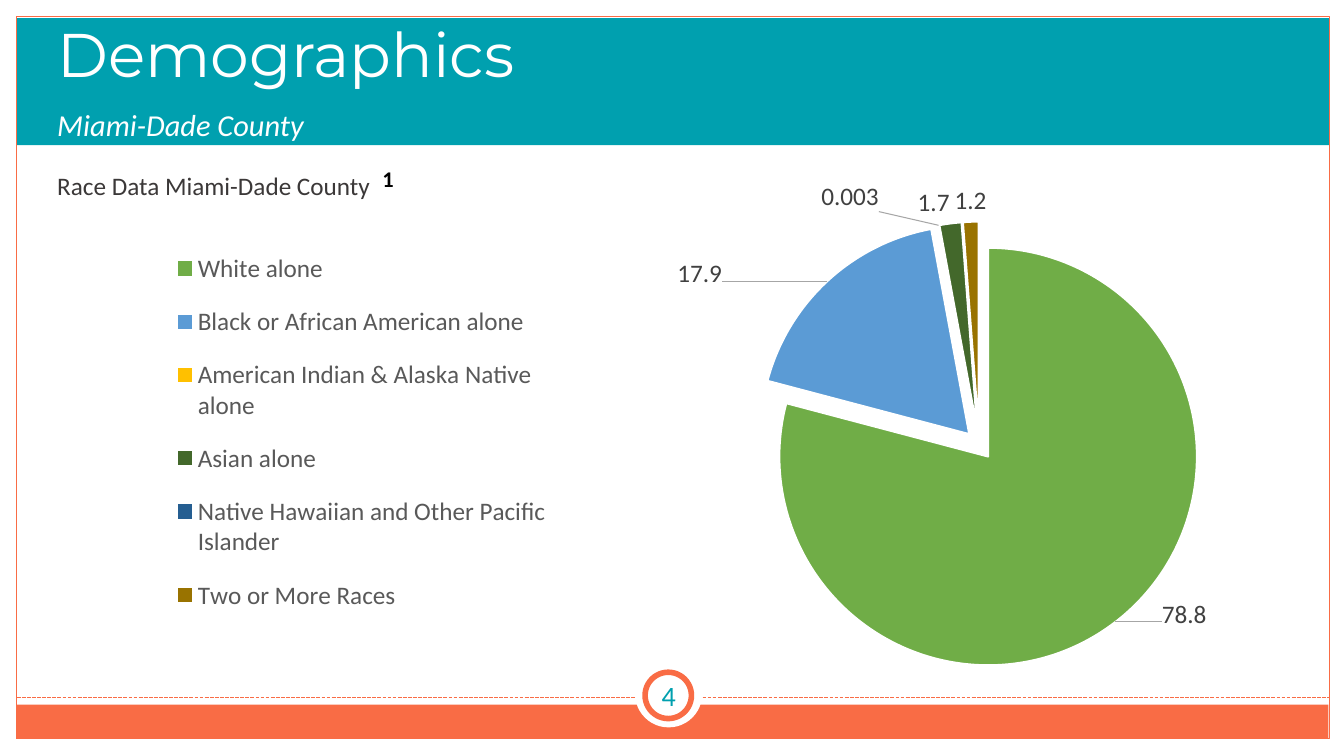
import pptx
import pptx.chart.data
import pptx.dml.color
import pptx.enum.chart
import pptx.enum.dml
import pptx.enum.shapes
import pptx.enum.text
import pptx.oxml
import pptx.oxml.ns
import pptx.util

Pt = pptx.util.Pt
qn = pptx.oxml.ns.qn
SHAPES = pptx.enum.shapes.MSO_SHAPE
ALIGN = pptx.enum.text.PP_ALIGN
ANCHOR = pptx.enum.text.MSO_ANCHOR

COLORS = {
    "teal": "00A0AF", "orange": "F96C45", "white": "FFFFFF", "black": "000000",
    "heading": "3B3838", "legend": "595959", "label": "404040", "leader": "A6A6A6",
}


def rgb(name):
    return pptx.dml.color.RGBColor.from_string(COLORS.get(name, name))


def write(shape, text, color, spacing=1.0, align=ALIGN.LEFT, anchor=ANCHOR.TOP, wrap=True, **font):
    frame = shape.text_frame
    frame.auto_size = pptx.enum.text.MSO_AUTO_SIZE.NONE
    frame.word_wrap = wrap
    frame.vertical_anchor = anchor
    paragraph = frame.paragraphs[0]
    paragraph.alignment = align
    paragraph.line_spacing = spacing
    run = paragraph.add_run()
    run.text = text
    run.font.color.rgb = rgb(color)
    for name, value in font.items():
        setattr(run.font, name, value)


presentation = pptx.Presentation()
presentation.slide_width = Pt(960)
presentation.slide_height = Pt(540)
slide = presentation.slides.add_slide(presentation.slide_layouts[5])
shapes = slide.shapes
title = shapes.title

# Frame, header and footer bands, page number badge
dashed_line = shapes.add_connector(
    pptx.enum.shapes.MSO_CONNECTOR.STRAIGHT, Pt(12), Pt(498.2), Pt(949), Pt(498.2))
dashed_line.line.color.rgb = rgb("orange")
dashed_line.line.width = Pt(0.9)
dashed_line.line.dash_style = pptx.enum.dml.MSO_LINE.SQUARE_DOT
dashed_line._element.spPr.append(pptx.oxml.parse_xml(
    '<a:effectLst xmlns:a="http://schemas.openxmlformats.org/drawingml/2006/main"/>'))

for preset, left, top, width, height, fill, line, line_width in [
    (SHAPES.RECTANGLE, 12, 13, 937.4, 90.7, "teal", None, 0),
    (SHAPES.RECTANGLE, 11.5, 503.3, 937.4, 24.5, "orange", None, 0),
    (SHAPES.RECTANGLE, 12, 12, 937.4, 515.5, None, "orange", 0.75),
    (SHAPES.OVAL, 453.6, 471.6, 48, 48, "white", None, 0),
    (SHAPES.OVAL, 460.8, 480.2, 33.1, 33.1, "white", "orange", 4),
]:
    shape = shapes.add_shape(preset, Pt(left), Pt(top), Pt(width), Pt(height))
    shape.shadow.inherit = False
    if fill:
        shape.fill.solid()
        shape.fill.fore_color.rgb = rgb(fill)
    else:
        shape.fill.background()
    if line:
        shape.line.color.rgb = rgb(line)
        shape.line.width = Pt(line_width)
    else:
        shape.line.fill.background()

# Title, brought in front of the header band
title.left, title.top, title.width, title.height = Pt(33.8), Pt(13.7), Pt(828), Pt(104.4)
write(title, "Demographics", "white", spacing=0.9, name="Montserrat", size=Pt(44))
shapes._spTree.append(title._element)

# Text boxes
for box, text, style in [
    ((33.8, 79.2, 724.3, 28.1), "Miami-Dade County",
     dict(color="white", spacing=0.7, size=Pt(21.7), italic=True)),
    ((447.1, 479.5, 61.2, 34.6), "4",
     dict(color="teal", align=ALIGN.CENTER, anchor=ANCHOR.MIDDLE, size=Pt(20))),
    ((252, 114.5, 50.4, 26.6), "1",
     dict(color="black", align=ALIGN.CENTER, size=Pt(16), bold=True)),
    ((33.8, 118.1, 241.2, 28.8), "Race Data Miami-Dade County",
     dict(color="heading", wrap=False, size=Pt(18))),
]:
    write(shapes.add_textbox(*map(Pt, box)), text, name="Calibri", **style)

# Pie chart
RACES = [
    ("White alone", 78.8, "70AD47"),
    ("Black or African American alone", 17.9, "5B9BD5"),
    ("American Indian & Alaska Native alone", 0.003, "FFC000"),
    ("Asian alone", 1.7, "43682B"),
    ("Native Hawaiian and Other Pacific Islander", 0, "255E91"),
    ("Two or More Races", 1.2, "997300"),
]
chart_data = pptx.chart.data.CategoryChartData()
chart_data.categories = [race for race, share, color in RACES]
chart_data.add_series("Series 1", [share for race, share, color in RACES])
chart = shapes.add_chart(pptx.enum.chart.XL_CHART_TYPE.PIE,
                         Pt(108), Pt(90.7), Pt(761.8), Pt(435.6), chart_data).chart
chart.has_title = False
chart.font.name = "Calibri"
chart.font.size = Pt(10)
chart.has_legend = True
legend = chart.legend
legend.position = pptx.enum.chart.XL_LEGEND_POSITION.BOTTOM
legend.include_in_layout = False

plot = chart.plots[0]
plot.vary_by_categories = True
series = plot.series[0]
for index, (race, share, color) in enumerate(RACES):
    point_format = series.points[index].format
    point_format.fill.solid()
    point_format.fill.fore_color.rgb = rgb(color)
    point_format.line.color.rgb = rgb("white")
    point_format.line.width = Pt(1.5)
explosion = pptx.oxml.parse_xml(
    f'<c:explosion {pptx.oxml.ns.nsdecls("c")} val="7"/>')
series._element.find(qn("c:dPt")).addprevious(explosion)
for data_point in series._element.findall(qn("c:dPt")):
    data_point.find(qn("c:spPr")).addprevious(pptx.oxml.parse_xml(
        f'<c:explosion {pptx.oxml.ns.nsdecls("c")} val="7"/>'))

# Value labels: the empty format sections hide the zero
OUTSIDE = pptx.enum.chart.XL_LABEL_POSITION.OUTSIDE_END
labels = series.data_labels
labels.show_value = True
labels.position = OUTSIDE
labels.number_format = "General;;"
labels.number_format_is_linked = False
label_offsets = [(0.04, -0.045), (-0.095, 0.02), (-0.055, -0.013)]
moved_labels = [series.points[index].data_label for index in range(len(label_offsets))]
for font, color in [(legend.font, "legend"), (labels.font, "label")] + [
        (label.font, "label") for label in moved_labels]:
    font.name = "Calibri"
    font.size = Pt(18)
    font.color.rgb = rgb(color)
for label in moved_labels:
    label.position = OUTSIDE
labels._element.append(pptx.oxml.parse_xml(
    f'<c:leaderLines {pptx.oxml.ns.nsdecls("c", "a")}><c:spPr><a:ln w="9525"><a:solidFill>'
    f'<a:srgbClr val="{COLORS["leader"]}"/></a:solidFill></a:ln></c:spPr></c:leaderLines>'))
labels._element.find(qn("c:showLeaderLines")).set("val", "1")

# Manual layouts, as fractions of the chart
legend_element = legend._element
for old_layout in legend_element.findall(qn("c:layout")) + plot._element.getparent().findall(qn("c:layout")):
    old_layout.getparent().remove(old_layout)
layouts = [
    (legend_element.find(qn("c:legendPos")), dict(xMode="edge", yMode="edge", x=0.012, y=0.17, w=0.37, h=0.66)),
    (None, dict(layoutTarget="inner", xMode="edge", yMode="edge", x=0.567, y=0.155, w=0.419, h=0.733)),
]
for element, (x, y) in zip(labels._element.findall(qn("c:dLbl")), label_offsets):
    layouts.append((element.find(qn("c:idx")), dict(x=x, y=y)))
for previous, values in layouts:
    entries = "".join(f'<c:{name} val="{value}"/>' for name, value in values.items())
    layout = pptx.oxml.parse_xml(f'<c:layout {pptx.oxml.ns.nsdecls("c")}>'
                                 f'<c:manualLayout>{entries}</c:manualLayout></c:layout>')
    if previous is None:
        plot._element.getparent().insert(0, layout)
    else:
        previous.addnext(layout)

presentation.save("out.pptx")
